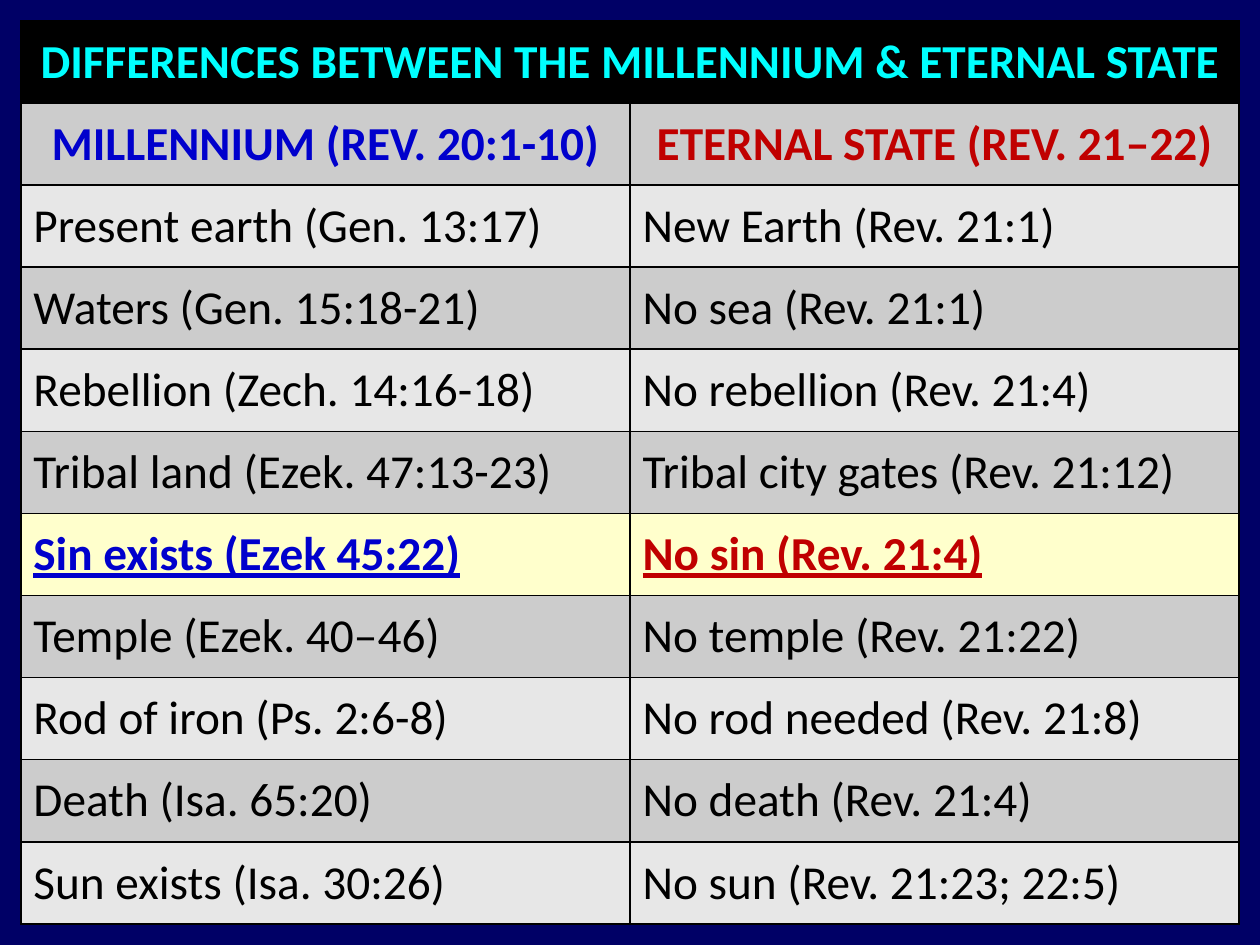
from lxml import etree
from pptx import Presentation
from pptx.dml.color import RGBColor
from pptx.enum.text import MSO_ANCHOR, PP_ALIGN
from pptx.oxml.ns import qn
from pptx.util import Cm, Pt

MIDDLE = MSO_ANCHOR.MIDDLE
CENTER, LEFT = PP_ALIGN.CENTER, PP_ALIGN.LEFT

TITLE = "DIFFERENCES BETWEEN THE MILLENNIUM & ETERNAL STATE"
HEADINGS = ("MILLENNIUM (REV. 20:1-10)", "ETERNAL STATE (REV. 21‒22)")
CONTRASTS = [
    ("Present earth (Gen. 13:17)", "New Earth (Rev. 21:1)"),
    ("Waters (Gen. 15:18-21)", "No sea (Rev. 21:1)"),
    ("Rebellion (Zech. 14:16-18)", "No rebellion (Rev. 21:4)"),
    ("Tribal land (Ezek. 47:13-23)", "Tribal city gates (Rev. 21:12)"),
    ("Sin exists (Ezek 45:22)", "No sin (Rev. 21:4)"),
    ("Temple (Ezek. 40‒46)", "No temple (Rev. 21:22)"),
    ("Rod of iron (Ps. 2:6-8)", "No rod needed (Rev. 21:8)"),
    ("Death (Isa. 65:20)", "No death (Rev. 21:4)"),
    ("Sun exists (Isa. 30:26)", "No sun (Rev. 21:23; 22:5)"),
]
HIGHLIGHT = 4

THEME = {
    "font": "Calibri",
    "size": Pt(27),
    "border": Pt(1),
    "background": "000066",
    "title": "00FFFF",
    "black": "000000",
    "columns": ("0000CC", "C00000"),
    "bands": ("E7E7E7", "CCCCCC"),
    "highlight": "FFFFCC",
}


def add_borders(cell):
    tc_pr = cell._tc.get_or_add_tcPr()
    for side in ("a:lnL", "a:lnR", "a:lnT", "a:lnB"):
        ln = etree.SubElement(tc_pr, qn(side), w=str(THEME["border"]))
        fill = etree.SubElement(ln, qn("a:solidFill"))
        etree.SubElement(fill, qn("a:srgbClr"), val=THEME["black"])


def write_cell(cell, text, fill, color, align=LEFT, bold=False, underline=False):
    cell.fill.solid()
    cell.fill.fore_color.rgb = RGBColor.from_string(fill)
    cell.vertical_anchor = MIDDLE
    p = cell.text_frame.paragraphs[0]
    p.alignment = align
    r = p.add_run()
    r.text = text
    style = {"name": THEME["font"], "size": THEME["size"],
             "bold": bold, "underline": underline}
    for name, value in style.items():
        setattr(r.font, name, value)
    r.font.color.rgb = RGBColor.from_string(color)


def main():
    prs = Presentation()
    prs.slide_width, prs.slide_height = Cm(25.4), Cm(19.05)
    s = prs.slides.add_slide(prs.slide_layouts[6])
    s.background.fill.solid()
    s.background.fill.fore_color.rgb = RGBColor.from_string(THEME["background"])

    margin = Cm(0.42)
    table = s.shapes.add_table(
        len(CONTRASTS) + 2, len(HEADINGS), margin, margin,
        prs.slide_width - 2 * margin, prs.slide_height - 2 * margin).table
    table.first_row = table.horz_banding = False
    for cell in table.iter_cells():
        add_borders(cell)

    title = table.cell(0, 0)
    title.merge(table.cell(0, len(HEADINGS) - 1))
    write_cell(title, TITLE, THEME["black"], THEME["title"], CENTER, True)

    for col, (heading, color) in enumerate(zip(HEADINGS, THEME["columns"])):
        write_cell(table.cell(1, col), heading, THEME["bands"][1], color, CENTER, True)
        for i, contrast in enumerate(CONTRASTS):
            marked = i == HIGHLIGHT
            write_cell(table.cell(i + 2, col), contrast[col],
                       THEME["highlight"] if marked else THEME["bands"][i % 2],
                       color if marked else THEME["black"],
                       bold=marked, underline=marked)

    prs.save("out.pptx")


if __name__ == "__main__":
    main()
